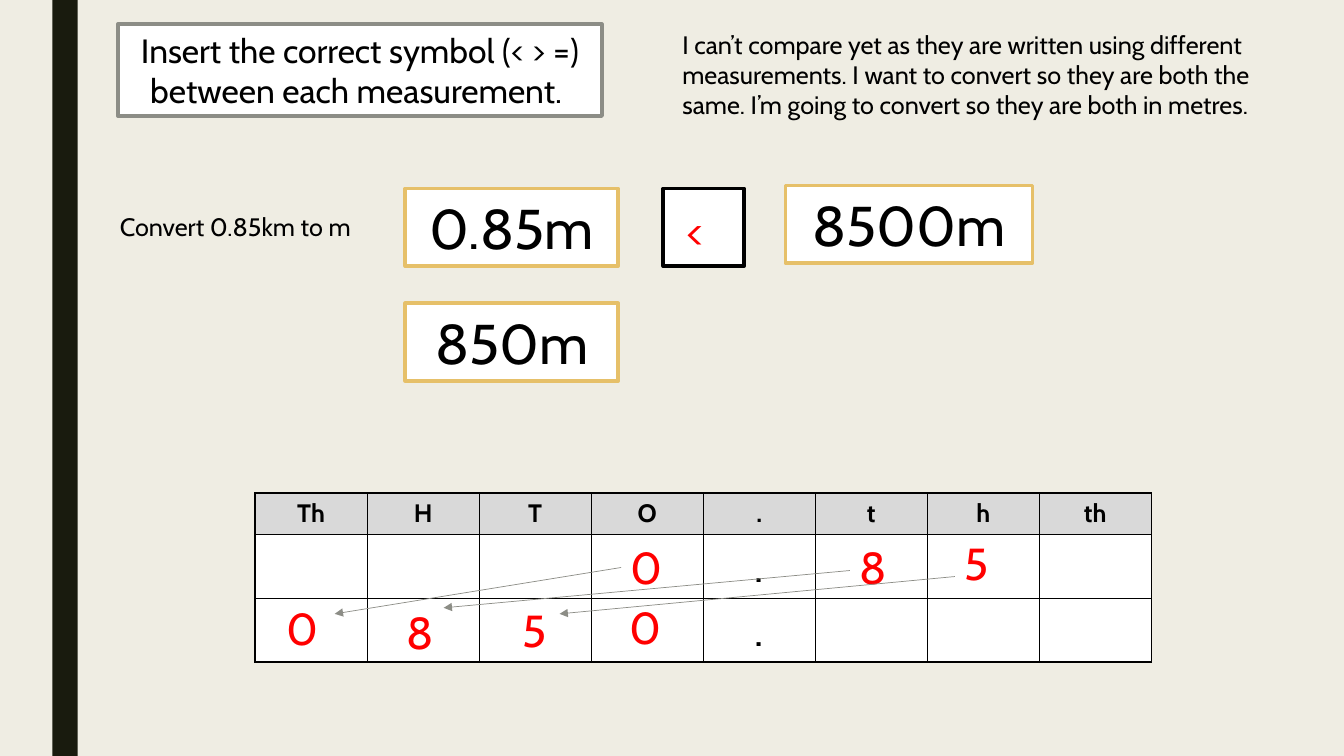
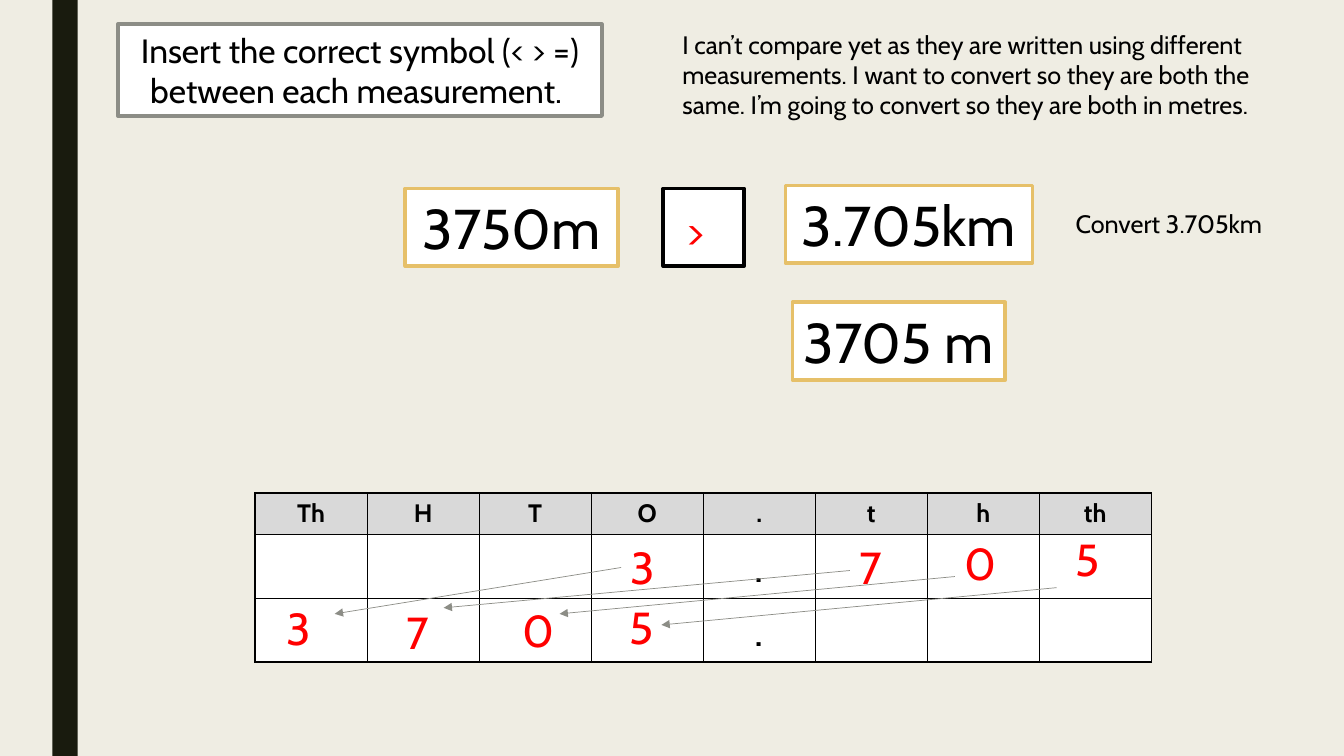
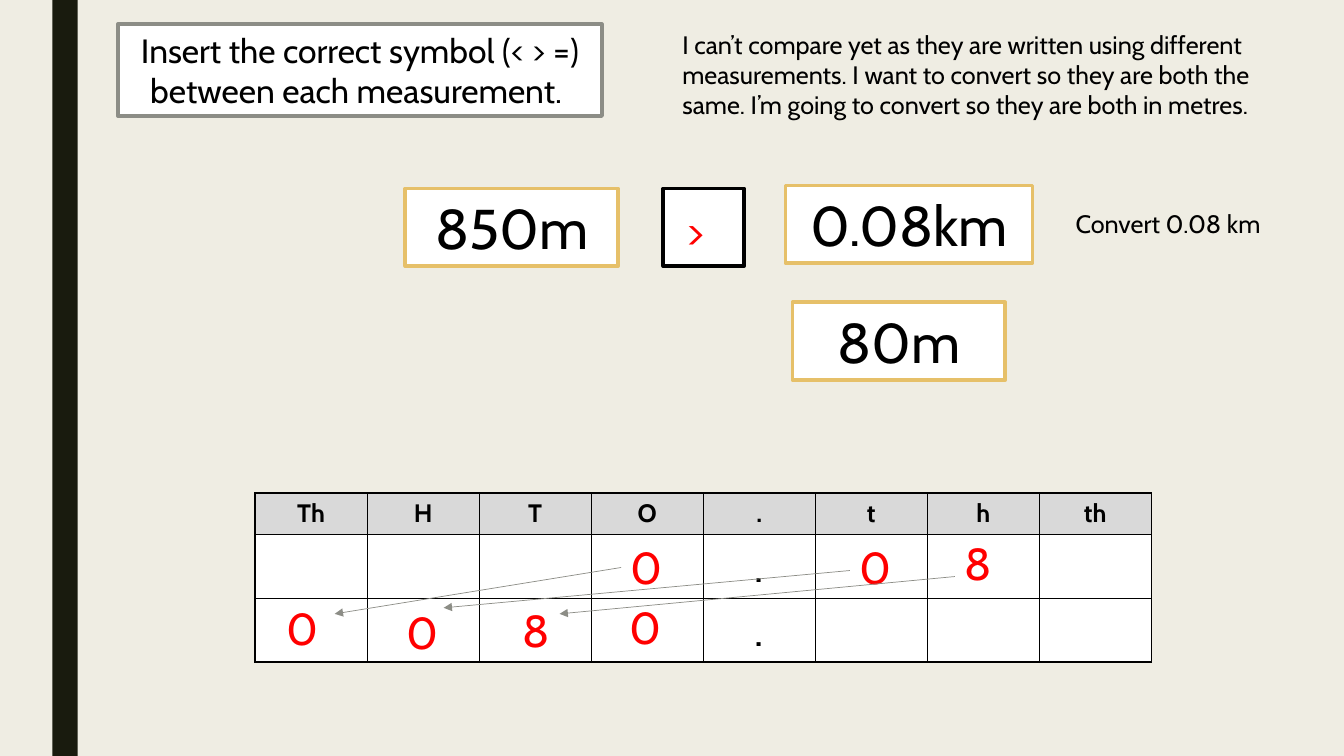
import pptx
import pptx.dml.color
import pptx.enum.shapes
import pptx.enum.text
import pptx.oxml
import pptx.oxml.ns
import pptx.util
from pptx.util import Inches

FONT = "Cabin"
CREAM, DARK, WHITE, BLACK = "EFEDE3", "191B0E", "FFFFFF", "000000"
GREY, GOLD, RED, HEAD = "8C8D86", "E6C069", "FF0000", "D9D9D9"
TASK = "Insert the correct symbol (< > =) between each measurement. "
NOTE = ("I can’t compare yet as they are written using different measurements. "
        "I want to convert so they are both the same. "
        "I’m going to convert so they are both in metres.")
NAMES = ["Th", "H", "T", "O", ".", "t", "h", "th"]
ROWS = [0.41, 0.63, 0.63]
START = [(3.63, 0.42), (5.9, 0.42), (6.94, 0.38), (8.04, 0.34)]
END = [(0.21, 1.02), (1.4, 1.06), (2.55, 1.04), (3.62, 1.01)]
MOVES = [(3.63, 0.74, 0.79, 1.2), (5.9, 0.77, 1.87, 1.14),
         (6.94, 0.83, 3.02, 1.2), (7.95, 0.94, 4.03, 1.31)]
LEFT, RIGHT = (4.02, 3.01, 2.11, 0.77), (7.86, 3, 2.11, 0.77)
ASIDE, BESIDE = (1.09, 2.05, 2.89, 0.4), (10.57, 2.02, 2.45, 0.4)
SLIDES = [
    dict(pair=("0.85m", "<", "8500m"), hint="Convert 0.85km to m", spot=ASIDE,
         result="850m", box=LEFT, before="085", after="0850"),
    dict(pair=("3750m", ">", "3.705km"), hint="Convert 3.705km", spot=BESIDE,
         result="3705 m", box=RIGHT, before="3705", after="3705"),
    dict(pair=("850m", ">", "0.08km"), hint="Convert 0.08 km", spot=BESIDE,
         result="80m", box=RIGHT, before="008", after="0080"),
]


def paint(part, color):
    """Give a fill or a line one solid colour."""
    fill = part.fill if hasattr(part, "fill") else part
    fill.solid()
    fill.fore_color.rgb = pptx.dml.color.RGBColor.from_string(color)


def write(frame, text, size=18, color=BLACK, bold=False, center=False):
    """Write one formatted paragraph into a text frame."""
    align = pptx.enum.text.PP_ALIGN
    line = frame.paragraphs[0]
    line.alignment = align.CENTER if center else align.LEFT
    run = line.add_run()
    run.text = text
    run.font.name = FONT
    run.font.size = pptx.util.Pt(size)
    run.font.bold = bold
    paint(run.font.fill, color)


def label(slide, box, text, **style):
    """Add a wrapping text box."""
    frame = slide.shapes.add_textbox(*map(Inches, box)).text_frame
    frame.word_wrap = True
    write(frame, text, **style)


def panel(slide, box, fill=WHITE, edge=None, text="", size=40):
    """Add a rectangle with an optional outline and centred text."""
    kind = pptx.enum.shapes.MSO_SHAPE.RECTANGLE
    shape = slide.shapes.add_shape(kind, *map(Inches, box))
    shape.shadow.inherit = False
    paint(shape, fill)
    if edge:
        paint(shape.line, edge)
        shape.line.width = pptx.util.Pt(2.75)
    else:
        shape.line.fill.background()
    if text:
        write(shape.text_frame, text, size=size, center=True)


def arrow(slide, ends):
    """Draw a thin arrow between two points."""
    kind = pptx.enum.shapes.MSO_CONNECTOR.STRAIGHT
    link = slide.shapes.add_connector(kind, *map(Inches, ends))
    paint(link.line, GREY)
    link.line.width = pptx.util.Pt(0.5)
    props = link.line._get_or_add_ln()
    tip = pptx.oxml.parse_xml(
        f'<a:tailEnd {pptx.oxml.ns.nsdecls("a")} type="triangle"/>')
    props.append(tip)
    flat = pptx.oxml.parse_xml(f'<a:effectLst {pptx.oxml.ns.nsdecls("a")}/>')
    props.addnext(flat)


def frame_cell(cell):
    """Put a black line on each side of a cell."""
    props = cell._tc.get_or_add_tcPr()
    for spot, side in enumerate("LRTB"):
        props.insert(spot, pptx.oxml.parse_xml(
            f'<a:ln{side} {pptx.oxml.ns.nsdecls("a")} w="12700"><a:solidFill>'
            f'<a:srgbClr val="{BLACK}"/></a:solidFill></a:ln{side}>'))


def chart(slide, left, top, width, before, after):
    """Place the place value grid with its digits and arrows."""
    size = map(Inches, (left, top, width, sum(ROWS)))
    grid = slide.shapes.add_table(len(ROWS), len(NAMES), *size).table
    for col in grid.columns:
        col.width = Inches(width / len(NAMES))
    for row, height in enumerate(ROWS):
        grid.rows[row].height = Inches(height)
        for col, name in enumerate(NAMES):
            cell = grid.cell(row, col)
            paint(cell, WHITE if row else HEAD)
            frame_cell(cell)
            if row == 0:
                cell.vertical_anchor = pptx.enum.text.MSO_ANCHOR.MIDDLE
                write(cell.text_frame, name, bold=True, center=True)
            elif name == ".":
                write(cell.text_frame, name, size=32, center=True)
    for digit, (x, y) in [*zip(before, START), *zip(after, END)]:
        label(slide, (left + x, top + y, 0.47, 0.64), digit, size=32, color=RED)
    for _, (x, y, to_x, to_y) in zip(before, MOVES):
        arrow(slide, (left + x, top + y, left + to_x, top + to_y))


def header(slide):
    """Place the side band, the task and the reasoning."""
    panel(slide, (0.52, 0, 0.25, 7.5), fill=DARK)
    panel(slide, (1.17, 0.24, 4.8, 0.91), edge=GREY, text=TASK, size=24)
    label(slide, (6.67, 0.24, 6.44, 1.01), NOTE)


def compare(slide, left, top, pair):
    """Place two measurements with the symbol between them."""
    first, sign, second = pair
    panel(slide, (left, top + 0.03, 2.11, 0.77), edge=GOLD, text=first)
    panel(slide, (left + 2.56, top + 0.03, 0.8, 0.77), edge=BLACK)
    label(slide, (left + 2.69, top + 0.13, 0.47, 0.64), sign, size=32, color=RED)
    panel(slide, (left + 3.77, top, 2.45, 0.77), edge=GOLD, text=second)


def build(deck, pair, hint, spot, result, box, before, after):
    """Add one comparison slide."""
    slide = deck.slides.add_slide(deck.slide_layouts[6])
    header(slide)
    compare(slide, 4.02, 1.84, pair)
    label(slide, spot, hint)
    panel(slide, box, edge=GOLD, text=result)
    chart(slide, 2.53, 4.89, 8.89, before, after)


def main():
    """Build and save the deck."""
    deck = pptx.Presentation()
    deck.slide_width, deck.slide_height = Inches(13.33), Inches(7.5)
    paint(deck.slide_master.background, CREAM)
    for item in SLIDES:
        build(deck, **item)
    deck.save("out.pptx")


if __name__ == "__main__":
    main()
